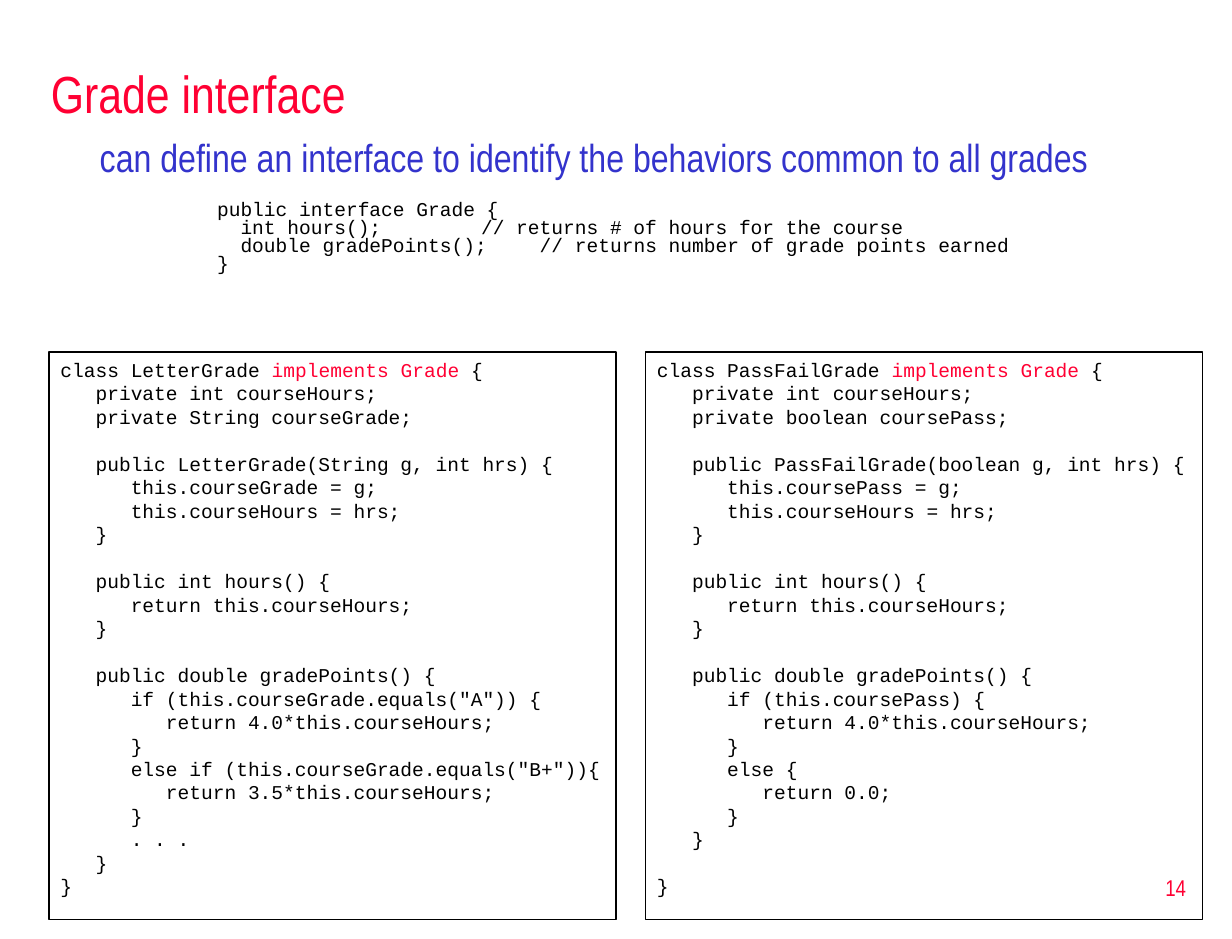
"""Build the Grade interface slide with its two implementing classes."""
from pptx import Presentation
from pptx.dml.color import RGBColor
from pptx.enum.shapes import MSO_SHAPE
from pptx.enum.text import MSO_ANCHOR, MSO_AUTO_SIZE, PP_ALIGN
from pptx.oxml.ns import qn
from pptx.util import Pt

RECTANGLE = MSO_SHAPE.RECTANGLE
TOP, MIDDLE = MSO_ANCHOR.TOP, MSO_ANCHOR.MIDDLE
LEFT, RIGHT = PP_ALIGN.LEFT, PP_ALIGN.RIGHT
NO_FIT = MSO_AUTO_SIZE.NONE
RED = RGBColor(0xFF, 0x00, 0x33)
BLUE = RGBColor(0x33, 0x33, 0xCC)
BLACK = RGBColor(0, 0, 0)
HEADING_FONT, CODE_FONT = "Arial Narrow", "Courier New"
PX = 7620
CODE_LINE = 14.4

TITLE = "Grade interface"
LEAD = "can define an interface to identify the behaviors common to all grades"
PAGE_NUMBER = "14"
KEYWORDS = "implements Grade "
INTERFACE = [
    "public interface Grade {",
    "  int hours();\t\t// returns # of hours for the course",
    "  double gradePoints();\t// returns number of grade points earned",
    "}",
]
LETTER_GRADE = """class LetterGrade implements Grade {
   private int courseHours;
   private String courseGrade;

   public LetterGrade(String g, int hrs) {
      this.courseGrade = g;
      this.courseHours = hrs;
   }

   public int hours() {
      return this.courseHours;
   }

   public double gradePoints() {
      if (this.courseGrade.equals("A")) {
         return 4.0*this.courseHours;
      }
      else if (this.courseGrade.equals("B+")){
         return 3.5*this.courseHours;
      }
      . . .
   }
}"""
PASS_FAIL_GRADE = """class PassFailGrade implements Grade {
   private int courseHours;
   private boolean coursePass;

   public PassFailGrade(boolean g, int hrs) {
      this.coursePass = g;
      this.courseHours = hrs;
   }

   public int hours() {
      return this.courseHours;
   }

   public double gradePoints() {
      if (this.coursePass) {
         return 4.0*this.courseHours;
      }
      else {
         return 0.0;
      }
   }

}"""
CLASS_BOXES = [
    ((50, 360, 580, 580), LETTER_GRADE),
    ((660, 360, 570, 580), PASS_FAIL_GRADE),
]


def scaled(*lengths):
    return [length * PX for length in lengths]


def place(shape, *bounds):
    shape.left, shape.top, shape.width, shape.height = scaled(*bounds)


def prepare(frame, anchor):
    frame.word_wrap = True
    frame.auto_size = NO_FIT
    frame.vertical_anchor = anchor


def next_paragraph(frame, index):
    return frame.add_paragraph() if index else frame.paragraphs[0]


def style(para, font, size, color, align=LEFT):
    para.alignment = align
    para.font.name = font
    para.font.size = Pt(size)
    para.font.color.rgb = color


def indent(para, margin, first_line):
    properties = para._p.get_or_add_pPr()
    properties.set("marL", str(margin * PX))
    properties.set("indent", str(first_line * PX))
    properties.insert_element_before(
        properties.makeelement(qn("a:buNone"), {}), "a:tabLst", "a:defRPr", "a:extLst")


def fill_body(frame):
    prepare(frame, TOP)
    for index, line in enumerate([LEAD] + INTERFACE):
        para = next_paragraph(frame, index)
        para.text = line
        if index == 0:
            style(para, HEADING_FONT, 24, BLUE)
            para.line_spacing, para.space_before = 0.8, Pt(4.8)
            indent(para, 45, -45)
        else:
            para.level = 2
            style(para, CODE_FONT, 12, BLACK)
            para.line_spacing = 0.6
            para.space_before = Pt(15 if index == 1 else 2.4)
            indent(para, 150, -30)


def add_class_box(page, bounds, code):
    box = page.shapes.add_shape(RECTANGLE, *scaled(*bounds))
    box.shadow.inherit = False
    box.fill.background()
    box.line.color.rgb = BLACK
    box.line.width = Pt(1)
    frame = box.text_frame
    prepare(frame, TOP)
    lines = [(line, number == 0 and block > 0)
             for block, text in enumerate(code.split("\n\n"))
             for number, line in enumerate(text.split("\n"))]
    for index, (line, starts_block) in enumerate(lines):
        para = next_paragraph(frame, index)
        style(para, CODE_FONT, 12, BLACK)
        para.space_before = Pt(CODE_LINE if starts_block else 0)
        for part in filter(None, line.partition(KEYWORDS)):
            span = para.add_run()
            span.text = part
            span.font.color.rgb = RED if part == KEYWORDS else BLACK


def main():
    deck = Presentation()
    deck.slide_width, deck.slide_height = scaled(1260, 960)
    page = deck.slides.add_slide(deck.slide_layouts[1])

    title, body = page.placeholders
    place(title, 40, 50, 1190, 90)
    title.text_frame.text = TITLE
    prepare(title.text_frame, MIDDLE)
    style(title.text_frame.paragraphs[0], HEADING_FONT, 32, RED)

    place(body, 90, 140, 1142, 180)
    fill_body(body.text_frame)

    for bounds, code in CLASS_BOXES:
        add_class_box(page, bounds, code)

    number = page.shapes.add_textbox(*scaled(962, 875, 263, 64))
    number.text_frame.text = PAGE_NUMBER
    prepare(number.text_frame, MIDDLE)
    style(number.text_frame.paragraphs[0], HEADING_FONT, 14, RED, RIGHT)

    deck.save("out.pptx")


if __name__ == "__main__":
    main()
